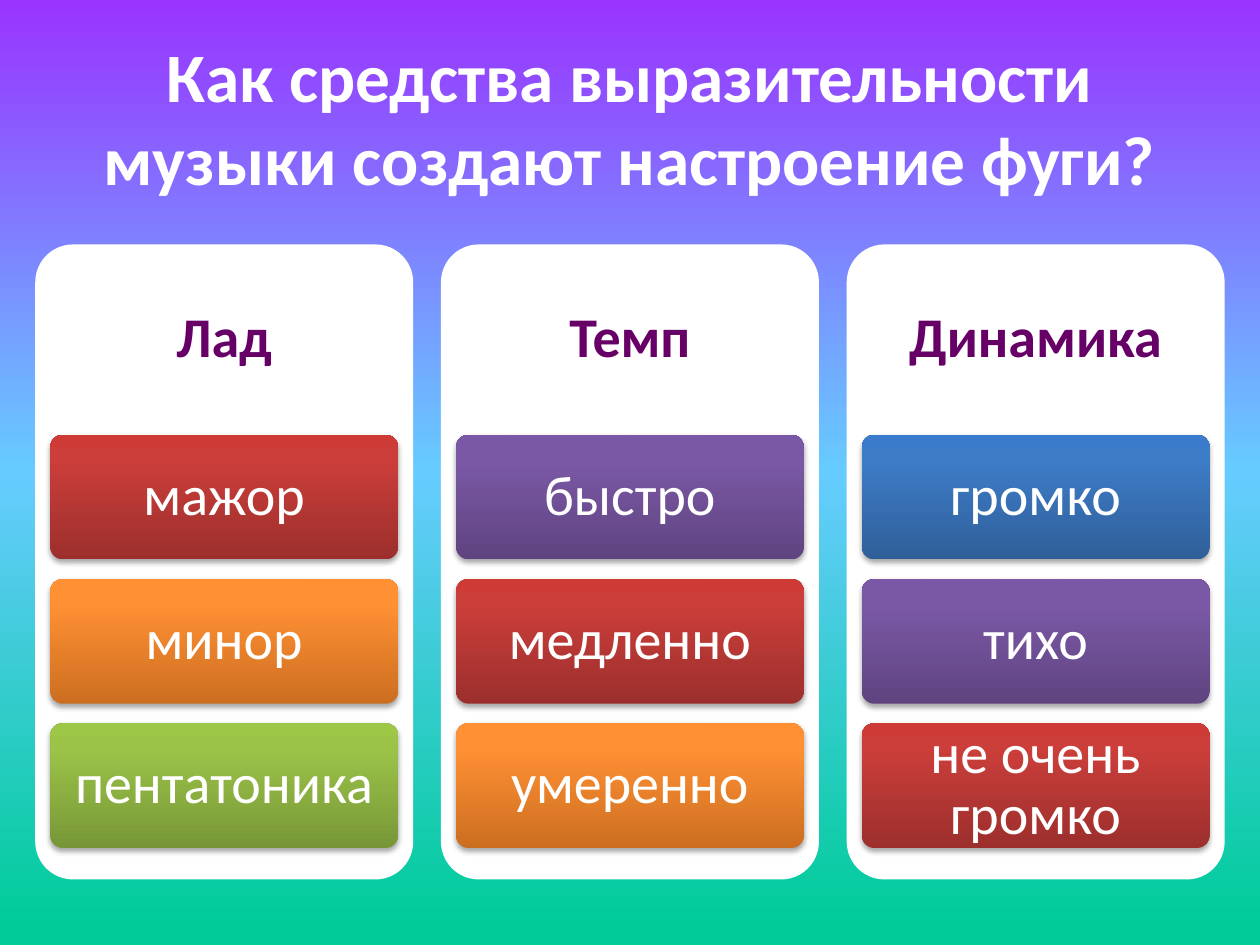
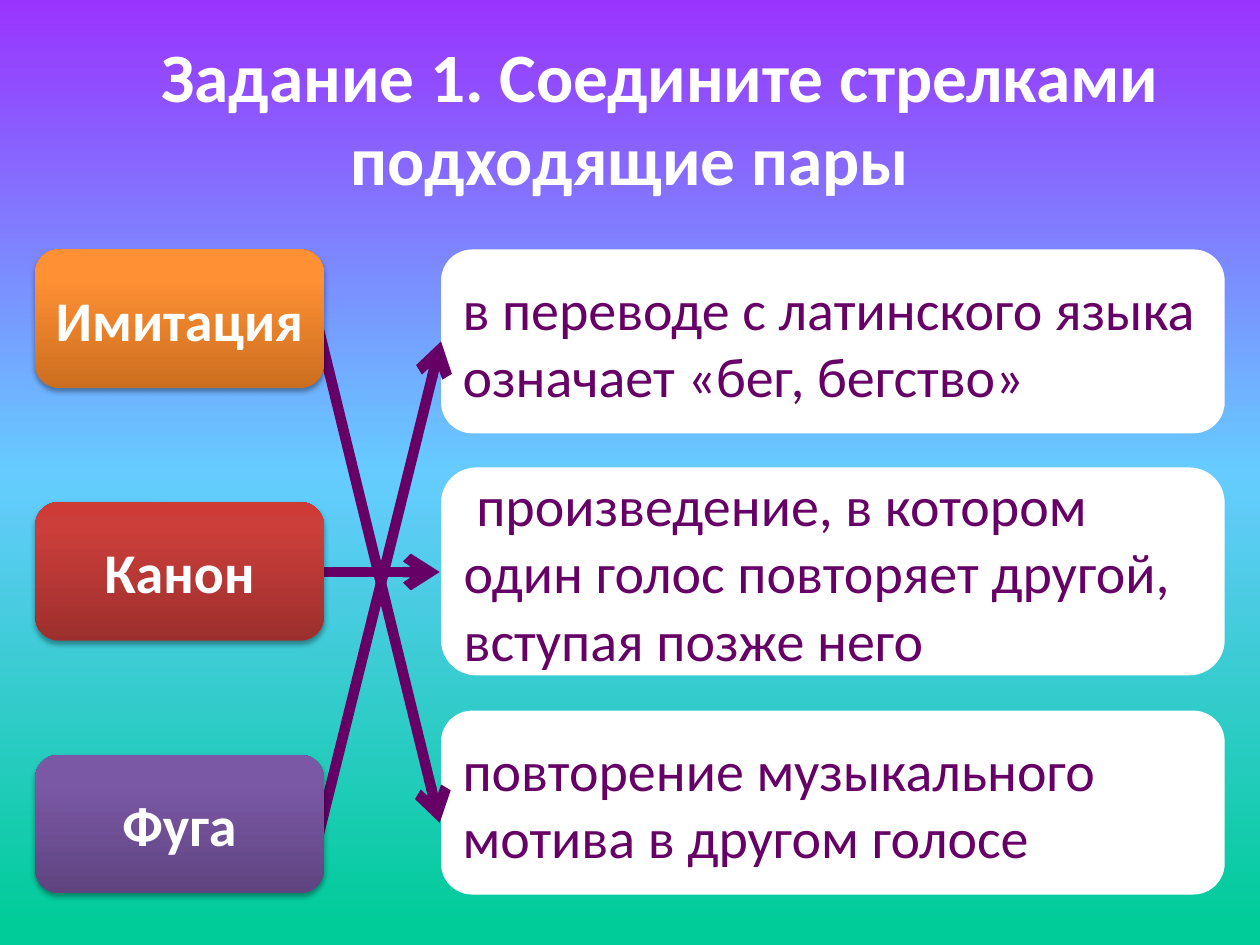
from dataclasses import dataclass

from lxml.etree import SubElement
from pptx import Presentation
from pptx.dml.color import RGBColor
from pptx.enum.shapes import MSO_CONNECTOR, MSO_SHAPE
from pptx.enum.text import MSO_ANCHOR, PP_ALIGN
from pptx.oxml import parse_xml
from pptx.oxml.ns import nsdecls, qn
from pptx.util import Inches, Pt


@dataclass(frozen=True)
class Theme:
    font: str = "Calibri"
    title_size: float = 39.6
    body_size: float = 32
    white: str = "FFFFFF"
    plum: str = "660066"
    sky: tuple = ((0, "9933FF"), (50, "66CCFF"), (98, "00CC99"))
    red: tuple = ((0, "9C2F2D"), (80, "CB3E3A"), (100, "CE3B37"))
    orange: tuple = ((0, "CC6E20"), (80, "FF9034"), (100, "FF9136"))
    green: tuple = ((0, "779737"), (80, "9BC348"), (100, "9DC746"))
    violet: tuple = ((0, "5F4480"), (80, "7B58A6"), (100, "7C57A8"))
    blue: tuple = ((0, "2F5F99"), (80, "3D7CC7"), (100, "3A7CCB"))


THEME = Theme()
DOWN, UP = 90, 270  # gradient directions in degrees

# Text formats
TITLE = {"size": Pt(THEME.title_size), "bold": True, "color": THEME.white}
HEADING = {"size": Pt(THEME.body_size), "bold": True, "color": THEME.plum}
MEANS = {"size": Pt(THEME.body_size), "bold": False, "color": THEME.white}
TERM = {**MEANS, "bold": True}
DEFINITION = {**HEADING, "bold": False}

CENTERED = {"alignment": PP_ALIGN.CENTER}
LEFT = {"alignment": PP_ALIGN.LEFT}
TIGHT = {**CENTERED, "line_spacing": 0.9}
TILE_MARGINS = {"margin_left": Inches(0.09), "margin_right": Inches(0.09),
                "margin_top": Inches(0.07), "margin_bottom": Inches(0.07)}

# Slide content
ELEMENTS = [
    ("Лад", [("мажор", THEME.red), ("минор", THEME.orange),
             ("пентатоника", THEME.green)]),
    ("Темп", [("быстро", THEME.violet), ("медленно", THEME.red),
              ("умеренно", THEME.orange)]),
    ("Динамика", [("громко", THEME.blue), ("тихо", THEME.violet),
                  ("не очень громко", THEME.red)]),
]
TERMS = [("Имитация", THEME.orange), ("Канон", THEME.red),
         ("Фуга", THEME.violet)]
# Text, top, height, first-line indent
DEFINITIONS = [
    ("в переводе с латинского языка означает «бег, бегство»", 1.98, 1.46, 0),
    ("произведение, в котором один голос повторяет другой, "
     "вступая позже него", 3.71, 1.65, 0.1),
    ("повторение музыкального мотива в другом голосе", 5.64, 1.46, 0),
]
PAIR_ARROWS = [((2.48, 2.41), (3.49, 6.53)),
               ((2.56, 4.54), (3.49, 4.54)),
               ((2.48, 6.82), (3.5, 2.71))]


def set_values(target, values):
    for name, value in values.items():
        setattr(target, name, value)


def spread(first, last, count):
    """Evenly spaced positions from first to last."""
    return [first + (last - first) * i / (count - 1) for i in range(count)]


def replace_with_gradient(properties, stops, angle):
    """Swap the empty fill of a property element for a linear gradient."""
    marks = "".join(
        f'<a:gs pos="{position * 1000}"><a:srgbClr val="{color}"/></a:gs>'
        for position, color in stops)
    gradient = parse_xml(
        f'<a:gradFill {nsdecls("a")} rotWithShape="1"><a:gsLst>{marks}</a:gsLst>'
        f'<a:lin ang="{angle * 60000}" scaled="0"/></a:gradFill>')
    properties.replace(properties.find(qn("a:noFill")), gradient)


def write(frame, text, text_format, layout, margins=None, indent=0):
    set_values(frame, {"word_wrap": True,
                       "vertical_anchor": MSO_ANCHOR.MIDDLE,
                       **(margins or {})})
    paragraph = frame.paragraphs[0]
    paragraph.text = text
    set_values(paragraph, layout)
    if indent:
        paragraph._p.get_or_add_pPr().set("indent", str(Inches(indent)))
    font_values = {"name": THEME.font, **text_format}
    color = font_values.pop("color")
    for run in paragraph.runs:
        set_values(run.font, font_values)
        run.font.color.rgb = RGBColor.from_string(color)


def add_label(slide, box, text, text_format, layout, indent=0):
    label = slide.shapes.add_textbox(*map(Inches, box))
    write(label.text_frame, text, text_format, layout, indent=indent)


def add_rounded(slide, box, roundness):
    rounded = slide.shapes.add_shape(MSO_SHAPE.ROUNDED_RECTANGLE,
                                     *map(Inches, box))
    rounded.adjustments[0] = roundness
    rounded.line.fill.background()
    rounded.shadow.inherit = False
    return rounded


def add_white_card(slide, box, roundness):
    card = add_rounded(slide, box, roundness)
    card.fill.solid()
    card.fill.fore_color.rgb = RGBColor.from_string(THEME.white)
    return card


def add_glossy_button(slide, box, roundness, stops):
    button = add_rounded(slide, box, roundness)
    button.fill.background()
    properties = button._element.spPr
    replace_with_gradient(properties, stops, UP)
    properties.find(qn("a:effectLst")).append(parse_xml(
        f'<a:outerShdw {nsdecls("a")} blurRad="{Pt(3.1)}" dist="{Pt(1.8)}" '
        'dir="5400000" rotWithShape="0"><a:srgbClr val="000000">'
        '<a:alpha val="35000"/></a:srgbClr></a:outerShdw>'))
    return button


def add_arrow(slide, start, end):
    arrow = slide.shapes.add_connector(MSO_CONNECTOR.STRAIGHT,
                                       *map(Inches, start + end))
    arrow.line.width = Pt(6)
    arrow.line.color.rgb = RGBColor.from_string(THEME.plum)
    properties = arrow._element.spPr
    SubElement(properties.find(qn("a:ln")), qn("a:tailEnd"), type="arrow")
    SubElement(properties, qn("a:effectLst"))


def add_titled_slide(deck, title, indent=0):
    slide = deck.slides.add_slide(deck.slide_layouts[6])
    slide.background.fill.background()
    backdrop = slide._element.find(".//" + qn("p:bgPr"))
    replace_with_gradient(backdrop, THEME.sky, DOWN)
    add_label(slide, (0.5, 0.3, 9, 1.25), title, TITLE, CENTERED, indent)
    return slide


def add_element_column(slide, left, heading, means):
    width, tile_width = 3, 2.76
    add_white_card(slide, (left, 1.94, width, 5.04), 0.1)
    add_label(slide, (left, 1.94, width, 1.51), heading, HEADING, TIGHT)
    tile_left = left + (width - tile_width) / 2
    for top, (text, stops) in zip(spread(3.45, 5.74, len(means)), means):
        tile = add_glossy_button(slide, (tile_left, top, tile_width, 0.99),
                                 0.1, stops)
        write(tile.text_frame, text, MEANS, TIGHT, TILE_MARGINS)


def build_expression_slide(deck):
    slide = add_titled_slide(
        deck, "Как средства выразительности музыки создают настроение фуги?")
    lefts = spread(0.28, 6.72, len(ELEMENTS))
    for left, (heading, means) in zip(lefts, ELEMENTS):
        add_element_column(slide, left, heading, means)


def build_matching_slide(deck):
    slide = add_titled_slide(
        deck, "Задание 1. Соедините стрелками\vподходящие пары", indent=0.48)
    # Definitions on the right
    for text, top, height, indent in DEFINITIONS:
        card = add_white_card(slide, (3.5, top, 6.22, height), 0.17)
        write(card.text_frame, text, DEFINITION, LEFT, indent=indent)
    # Arrows start beneath the terms
    for start, end in PAIR_ARROWS:
        add_arrow(slide, start, end)
    # Terms on the left
    for top, (term, stops) in zip(spread(1.98, 5.99, len(TERMS)), TERMS):
        button = add_glossy_button(slide, (0.28, top, 2.29, 1.1), 0.17, stops)
        write(button.text_frame, term, TERM, CENTERED)


def main():
    deck = Presentation()
    set_values(deck, {"slide_width": Inches(10), "slide_height": Inches(7.5)})
    build_expression_slide(deck)
    build_matching_slide(deck)
    deck.save("out.pptx")


if __name__ == "__main__":
    main()
